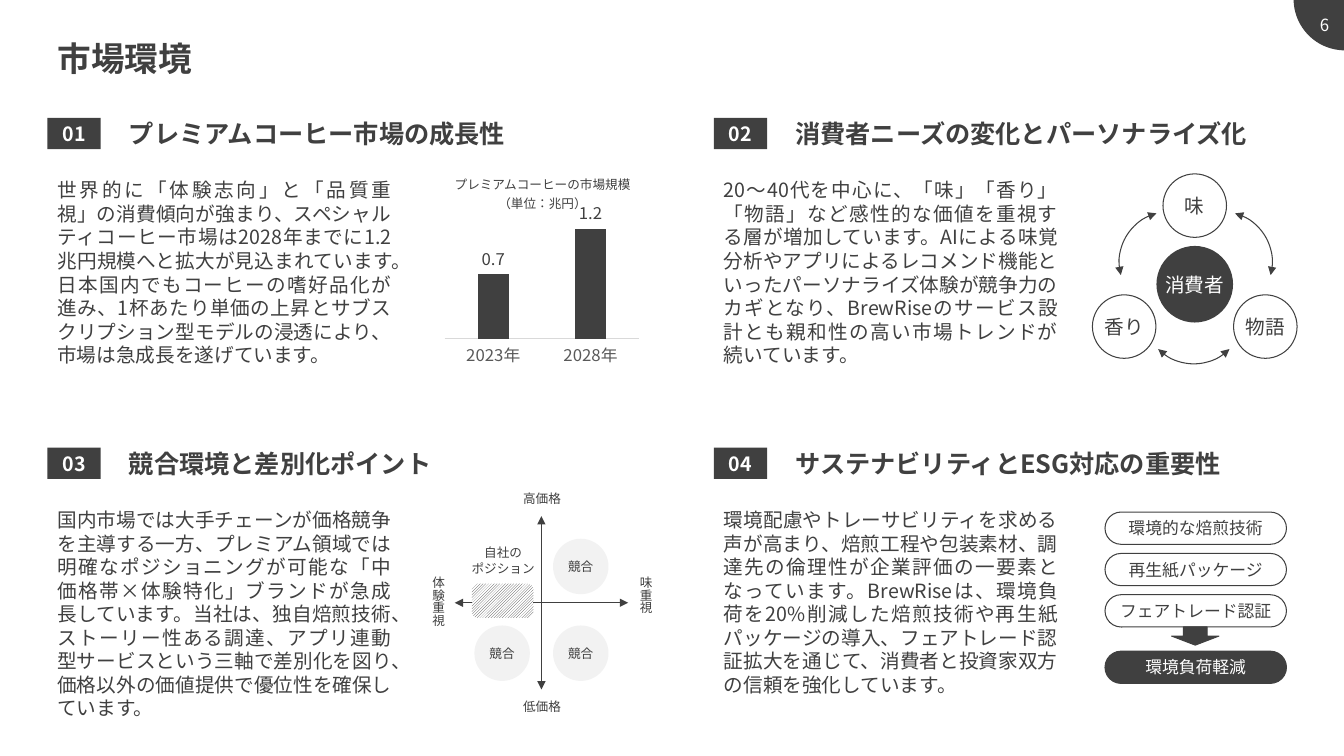
import pptx
import pptx.chart.data
import pptx.dml.color
import pptx.enum.chart
import pptx.enum.dml
import pptx.enum.lang
import pptx.enum.shapes
import pptx.enum.text
import pptx.oxml
import pptx.oxml.ns
import pptx.util

Inches = pptx.util.Inches
Pt = pptx.util.Pt
RGBColor = pptx.dml.color.RGBColor
SHAPE = pptx.enum.shapes.MSO_SHAPE
ALIGN = pptx.enum.text.PP_ALIGN
ANCHOR = pptx.enum.text.MSO_ANCHOR
JAPANESE = pptx.enum.lang.MSO_LANGUAGE_ID.JAPANESE
qn = pptx.oxml.ns.qn

DARK = RGBColor(0x40, 0x40, 0x40)
WHITE = RGBColor(0xFF, 0xFF, 0xFF)
PALE = RGBColor(0xF2, 0xF2, 0xF2)
AXIS_TEXT = RGBColor(0x59, 0x59, 0x59)
AXIS_LINE = RGBColor(0xD9, 0xD9, 0xD9)
FONT = "Noto Sans CJK JP"

SECTIONS = [
    ("プレミアムコーヒー市場の成長性",
     "世界的に「体験志向」と「品質重視」の消費傾向が強まり、スペシャルティコーヒー市場は2028年までに1.2兆円規模へと拡大が見込まれています。"
     "日本国内でもコーヒーの嗜好品化が進み、1杯あたり単価の上昇とサブスクリプション型モデルの浸透により、市場は急成長を遂げています。"),
    ("消費者ニーズの変化とパーソナライズ化",
     "20〜40代を中心に、「味」「香り」「物語」など感性的な価値を重視する層が増加しています。"
     "AIによる味覚分析やアプリによるレコメンド機能といったパーソナライズ体験が競争力のカギとなり、"
     "BrewRiseのサービス設計とも親和性の高い市場トレンドが続いています。"),
    ("競合環境と差別化ポイント",
     "国内市場では大手チェーンが価格競争を主導する一方、プレミアム領域では明確なポジショニングが可能な「中価格帯×体験特化」ブランドが急成長しています。"
     "当社は、独自焙煎技術、ストーリー性ある調達、アプリ連動型サービスという三軸で差別化を図り、価格以外の価値提供で優位性を確保しています。"),
    ("サステナビリティとESG対応の重要性",
     "環境配慮やトレーサビリティを求める声が高まり、焙煎工程や包装素材、調達先の倫理性が企業評価の一要素となっています。"
     "BrewRiseは、環境負荷を20%削減した焙煎技術や再生紙パッケージの導入、フェアトレード認証拡大を通じて、消費者と投資家双方の信頼を強化しています。"),
]


def write(shape, text, size, color=DARK, bold=False, align=ALIGN.CENTER,
          anchor=ANCHOR.MIDDLE, wrap=True, before=3):
    frame = shape.text_frame
    frame.text = text
    frame.word_wrap = wrap
    frame.vertical_anchor = anchor
    for paragraph in frame.paragraphs:
        paragraph.alignment = align
        paragraph.space_before = Pt(before)
        paragraph.line_spacing = 1.0
        font = paragraph.font
        font.name, font.size, font.bold = FONT, Pt(size), bold
        font.color.rgb = color
        font.language_id = JAPANESE
        east_asian = pptx.oxml.parse_xml(
            f'<a:ea {pptx.oxml.ns.nsdecls("a")} typeface="{FONT}"/>')
        paragraph.font._element.find(qn("a:latin")).addnext(east_asian)
        for run in paragraph.runs:
            run.font.language_id = JAPANESE


def add_text(slide, left, top, width, height, text, size, **style):
    box = slide.shapes.add_textbox(*map(Inches, (left, top, width, height)))
    write(box, text, size, **style)
    return box


def add_shape(slide, kind, left, top, width, height, fill=None, line=None):
    shape = slide.shapes.add_shape(kind, *map(Inches, (left, top, width, height)))
    shape.shadow.inherit = False
    if fill is None:
        shape.fill.background()
    else:
        shape.fill.solid()
        shape.fill.fore_color.rgb = fill
    if line is None:
        shape.line.fill.background()
    else:
        shape.line.color.rgb = line
        shape.line.width = Pt(0.75)
    return shape


def add_circle(slide, center_x, center_y, diameter, text, size, fill, line=None, color=DARK):
    circle = add_shape(slide, SHAPE.OVAL, center_x - diameter / 2, center_y - diameter / 2,
                       diameter, diameter, fill, line)
    write(circle, text, size, color, wrap=False)


def add_arrowheads(shape):
    line = shape.element.spPr.find(qn("a:ln"))
    for end in ("headEnd", "tailEnd"):
        line.append(pptx.oxml.parse_xml(
            f'<a:{end} {pptx.oxml.ns.nsdecls("a")} type="triangle"/>'))


def add_axis(slide, *ends):
    axis = slide.shapes.add_connector(
        pptx.enum.shapes.MSO_CONNECTOR.STRAIGHT, *map(Inches, ends))
    axis.line.color.rgb = DARK
    axis.line.width = Pt(0.75)
    add_arrowheads(axis)
    axis.element.spPr.append(pptx.oxml.parse_xml(
        f'<a:effectLst {pptx.oxml.ns.nsdecls("a")}/>'))


def add_header(slide, title, number):
    # Page number in the corner
    corner = add_shape(slide, SHAPE.PIE, 12.83, -0.52, 1.02, 1.02, DARK)
    corner.adjustments[0], corner.adjustments[1] = 53.55, 108.05
    add_text(slide, 12.79, 0, 0.49, 0.5, number, 12, color=WHITE, align=ALIGN.RIGHT, before=0)
    # Title
    placeholder = slide.shapes.title
    placeholder.left, placeholder.top = Inches(0.47), Inches(0.27)
    placeholder.width, placeholder.height = Inches(6.01), Inches(0.62)
    write(placeholder, title, 24, bold=True, align=ALIGN.LEFT, before=6)


def add_section(slide, left, top, number, heading, body):
    add_text(slide, left + 0.71, top, 4.99, 0.31, heading, 18, bold=True, align=ALIGN.JUSTIFY)
    tag = add_shape(slide, SHAPE.RECTANGLE, left, top, 0.53, 0.31, DARK)
    write(tag, f"{number:02}", 14, WHITE, bold=True)
    add_text(slide, left, top + 0.55, 3.51, 1.96, body, 14,
             align=ALIGN.JUSTIFY, anchor=ANCHOR.TOP)


def add_market_chart(slide, left, top):
    data = pptx.chart.data.CategoryChartData()
    data.categories = ["2023年", "2028年"]
    data.add_series("Series 1", (0.7, 1.2))
    chart = slide.shapes.add_chart(
        pptx.enum.chart.XL_CHART_TYPE.COLUMN_CLUSTERED, Inches(left + 0.05),
        Inches(top + 0.27), Inches(2.01), Inches(1.68), data).chart
    chart.has_legend = chart.has_title = False
    chart.font.name, chart.font.size = FONT, Pt(10)
    # Axes
    values = chart.value_axis
    values.visible = values.has_major_gridlines = False
    values.minimum_scale, values.maximum_scale = 0, 1.4
    years = chart.category_axis
    years.major_tick_mark = pptx.enum.chart.XL_TICK_MARK.NONE
    years.format.line.color.rgb = AXIS_LINE
    years.format.line.width = Pt(0.75)
    # Columns and labels
    plot = chart.plots[0]
    plot.gap_width, plot.overlap, plot.vary_by_categories = 219, -27, False
    columns = plot.series[0].format.fill
    columns.solid()
    columns.fore_color.rgb = DARK
    labels = plot.series[0].data_labels
    labels.show_value = True
    labels.position = pptx.enum.chart.XL_LABEL_POSITION.OUTSIDE_END
    for font, color in ((years.tick_labels.font, AXIS_TEXT), (labels.font, DARK)):
        font.name, font.size = FONT, Pt(12)
        font.color.rgb = color
    # Caption
    add_text(slide, left, top, 2.12, 0.41, "プレミアムコーヒーの市場規模\n（単位：兆円）", 9)


def add_needs_cycle(slide, left, top):
    add_circle(slide, left + 1.01, top + 1.09, 0.76, "消費者", 14, DARK, color=WHITE)
    for x, y, need in ((1.01, 0.31, "味"), (0.31, 1.51, "香り"), (1.71, 1.51, "物語")):
        add_circle(slide, left + x, top + y, 0.63, need, 14, WHITE, DARK)
    # Arrows between the needs
    for x, y, rotation, flipped in ((0.5, 0.88, 135, False), (0.78, 0.37, 15, False),
                                    (0.26, 0.37, 345, True)):
        arc = add_shape(slide, SHAPE.ARC, left + x, top + y, 1, 1, line=DARK)
        arc.rotation = rotation
        if flipped:
            arc.element.spPr.xfrm.set("flipH", "1")
        add_arrowheads(arc)


def add_position_map(slide, left, top):
    center_x, center_y, reach = left + 1.2, top + 1.2, 0.86
    add_axis(slide, center_x, center_y - reach, center_x, center_y + reach)
    add_axis(slide, center_x + reach, center_y, center_x - reach, center_y)
    # Axis names
    for y, name in ((0, "高価格"), (2.06, "低価格")):
        add_text(slide, center_x - 0.54, top + y, 1.09, 0.34, name, 9)
    for x, name in ((2.06, "味重視"), (0, "体験重視")):
        label = add_text(slide, left + x, center_y - 0.36, 0.35, 0.72, name, 9)
        label.element.txBody.bodyPr.set("vert", "eaVert")
    # Own position
    own = add_shape(slide, SHAPE.ROUNDED_RECTANGLE, left + 0.51, top + 1.01, 0.61, 0.34, WHITE)
    own.fill.patterned()
    own.fill.pattern = pptx.enum.dml.MSO_PATTERN.LIGHT_UPWARD_DIAGONAL
    own.fill.fore_color.rgb, own.fill.back_color.rgb = DARK, WHITE
    add_text(slide, left + 0.37, top + 0.61, 0.9, 0.34, "自社の\vポジション", 9)
    # Competitors
    for x, y in ((0.39, -0.36), (0.39, 0.5), (-0.39, 0.5)):
        add_circle(slide, center_x + x, center_y + y, 0.55, "競合", 9, PALE)


def add_sustainability_flow(slide, left, top):
    steps = [(0, "環境的な焙煎技術", WHITE, DARK), (0.41, "再生紙パッケージ", WHITE, DARK),
             (0.82, "フェアトレード認証", WHITE, DARK), (1.38, "環境負荷軽減", DARK, WHITE)]
    for y, text, fill, color in steps:
        pill = add_shape(slide, SHAPE.ROUNDED_RECTANGLE, left, top + y, 1.8, 0.32, fill, DARK)
        pill.adjustments[0] = 0.5
        write(pill, text, 12, color, wrap=False)
    add_shape(slide, SHAPE.DOWN_ARROW, left + 0.66, top + 1.14, 0.47, 0.18, DARK, DARK)


def main():
    presentation = pptx.Presentation()
    presentation.slide_width, presentation.slide_height = Inches(13.33), Inches(7.5)
    slide = presentation.slides.add_slide(presentation.slide_layouts[5])
    add_header(slide, "市場環境", "6")
    for index, (heading, body) in enumerate(SECTIONS):
        row, column = divmod(index, 2)
        add_section(slide, 0.47 + 6.61 * column, 1.17 + 3.27 * row, index + 1, heading, body)
    add_market_chart(slide, 4.32, 1.72)
    add_needs_cycle(slide, 10.84, 1.73)
    add_position_map(slide, 4.17, 4.78)
    add_sustainability_flow(slide, 10.96, 5.08)
    presentation.save("out.pptx")


if __name__ == "__main__":
    main()
